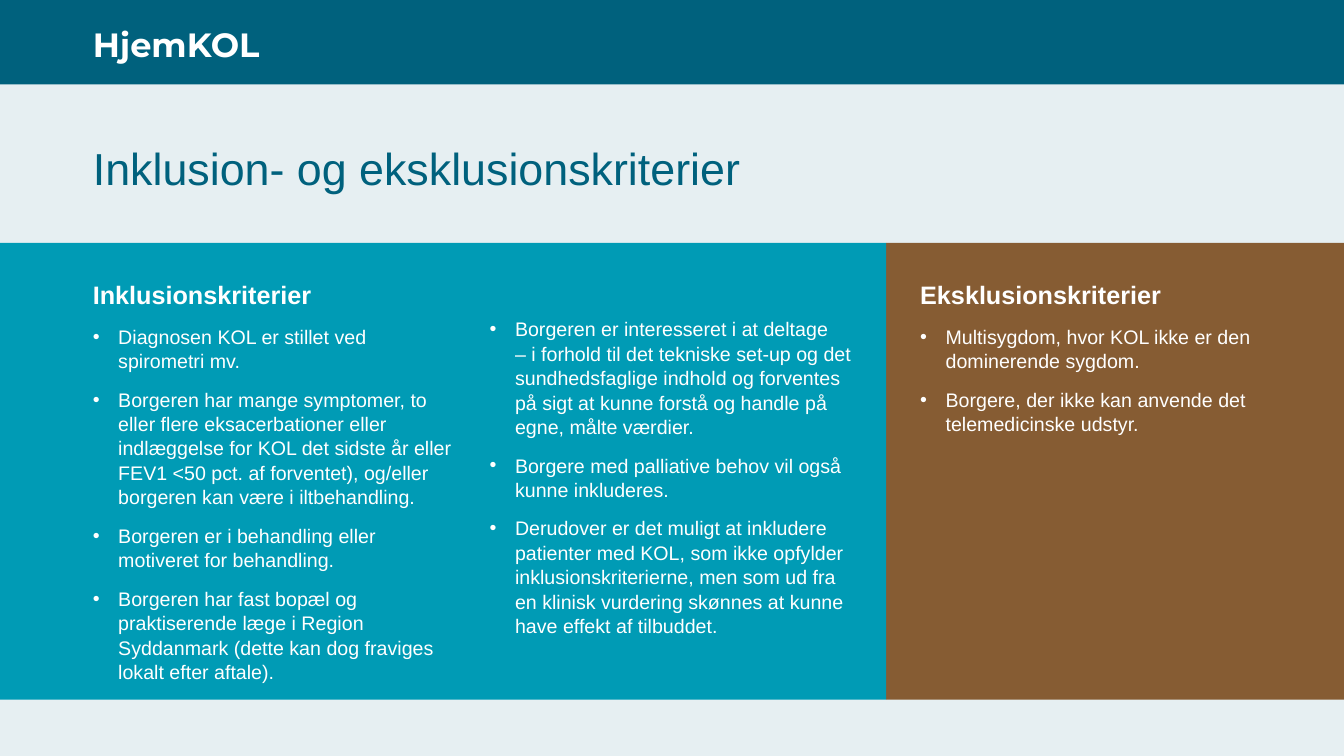
from dataclasses import dataclass

from lxml.etree import SubElement
from pptx import Presentation
from pptx.dml.color import RGBColor
from pptx.enum.shapes import MSO_SHAPE
from pptx.enum.text import MSO_ANCHOR, MSO_AUTO_SIZE, PP_ALIGN
from pptx.oxml.ns import qn
from pptx.util import Cm, Pt


@dataclass(frozen=True)
class Theme:
    background: str = "E6EFF2"
    banner: str = "00617D"
    inclusion: str = "009BB5"
    exclusion: str = "865C33"
    light: str = "FFFFFF"
    font: str = "Arial"
    banner_font: str = "Montserrat"
    title_size: int = 32
    banner_size: int = 24
    heading_size: int = 18
    body_size: int = 14


@dataclass(frozen=True)
class Box:
    left: float
    top: float
    width: float
    height: float

    def inner(self, left, top, width, height):
        return Box(self.left + left, self.top + top, width, height)


THEME = Theme()
SLIDE = Box(0, 0, 33.87, 19.05)
MARGIN = 2.34
PANEL_TOP, PANEL_HEIGHT = 6.12, 11.51
SPLIT = 22.33
COLUMN_TOP, COLUMN_HEIGHT = 0.89, 9.58
INDENT = Cm(0.64)

INCLUSION_FIRST = [
    "Diagnosen KOL er stillet ved spirometri mv.",
    "Borgeren har mange symptomer, to eller flere eksacerbationer eller indlæggelse "
    "for KOL det sidste år eller FEV1 <50 pct. af forventet), og/eller borgeren kan "
    "være i iltbehandling.",
    "Borgeren er i behandling eller motiveret for behandling.",
    "Borgeren har fast bopæl og praktiserende læge i Region Syddanmark "
    "(dette kan dog fraviges lokalt efter aftale).",
]
INCLUSION_SECOND = [
    "Borgeren er interesseret i at deltage\n– i forhold til det tekniske set-up og det "
    "sundhedsfaglige indhold og forventes på sigt at kunne forstå og handle på egne, "
    "målte værdier.",
    "Borgere med palliative behov vil også kunne inkluderes.",
    "Derudover er det muligt at inkludere patienter med KOL, som ikke opfylder "
    "inklusionskriterierne, men som ud fra en klinisk vurdering skønnes at kunne "
    "have effekt af tilbuddet.",
]
EXCLUSION = [
    "Multisygdom, hvor KOL ikke er den dominerende sygdom.",
    "Borgere, der ikke kan anvende det telemedicinske udstyr.",
]


def place(shape, box):
    shape.left, shape.top = Cm(box.left), Cm(box.top)
    shape.width, shape.height = Cm(box.width), Cm(box.height)


def add_panel(slide, box, color):
    shape = slide.shapes.add_shape(
        MSO_SHAPE.RECTANGLE, Cm(box.left), Cm(box.top), Cm(box.width), Cm(box.height))
    shape.shadow.inherit = False
    shape.fill.solid()
    shape.fill.fore_color.rgb = RGBColor.from_string(color)
    shape.line.fill.background()


def add_text_box(slide):
    return slide.shapes.add_textbox(0, 0, 0, 0)


def prepare_frame(shape, box, anchor=MSO_ANCHOR.TOP):
    place(shape, box)
    frame = shape.text_frame
    frame.word_wrap = True
    frame.auto_size = MSO_AUTO_SIZE.NONE
    frame.vertical_anchor = anchor
    frame.margin_left = frame.margin_right = frame.margin_top = frame.margin_bottom = 0
    return frame


def set_bullet(paragraph, bullet):
    properties = paragraph._p.get_or_add_pPr()
    properties.set("marL", str(INDENT if bullet else 0))
    properties.set("indent", str(-INDENT if bullet else 0))
    if bullet:
        SubElement(properties, qn("a:buFont"), typeface=THEME.font)
        SubElement(properties, qn("a:buChar"), char="•")
    else:
        SubElement(properties, qn("a:buNone"))


def write(paragraph, text, size=THEME.body_size, color=THEME.light, font=THEME.font,
          bold=False, bullet=False, after=0, spacing=1.0):
    paragraph.text = text
    paragraph.alignment = PP_ALIGN.LEFT
    paragraph.line_spacing = spacing
    paragraph.space_before, paragraph.space_after = Pt(0), Pt(after)
    set_bullet(paragraph, bullet)
    for run in paragraph.runs:
        run.font.name, run.font.size, run.font.bold = font, Pt(size), bold
        run.font.color.rgb = RGBColor.from_string(color)
    for line_break in paragraph._p.findall(qn("a:br")):
        SubElement(line_break, qn("a:rPr"), sz=str(size * 100))


def fill_column(shape, box, criteria, heading=None):
    frame = prepare_frame(shape, box)
    entries = [(heading, dict(size=THEME.heading_size, bold=True))] if heading else []
    entries += [(text, dict(bullet=True)) for text in criteria]
    for index, (text, style) in enumerate(entries):
        paragraph = frame.add_paragraph() if index else frame.paragraphs[0]
        write(paragraph, text, after=10, spacing=1.04, **style)


def add_banner(slide, box):
    add_panel(slide, box, THEME.banner)
    frame = prepare_frame(add_text_box(slide), box.inner(MARGIN, 0.61, 14.2, 1.02),
                          MSO_ANCHOR.MIDDLE)
    write(frame.paragraphs[0], "HjemKOL", size=THEME.banner_size,
          font=THEME.banner_font, bold=True)


def add_title(slide, box):
    frame = prepare_frame(slide.shapes.title, box)
    write(frame.paragraphs[0], "Inklusion- og eksklusionskriterier",
          size=THEME.title_size, color=THEME.banner, spacing=0.9)


def add_inclusion(slide, box):
    add_panel(slide, box, THEME.inclusion)
    fill_column(slide.placeholders[1], box.inner(MARGIN, COLUMN_TOP, 9.17, COLUMN_HEIGHT),
                INCLUSION_FIRST, "Inklusionskriterier")
    fill_column(add_text_box(slide), box.inner(12.34, 1.85, 9.17, COLUMN_HEIGHT),
                INCLUSION_SECOND)


def add_exclusion(slide, box):
    add_panel(slide, box, THEME.exclusion)
    fill_column(slide.placeholders[2], box.inner(0.86, COLUMN_TOP, 8.33, COLUMN_HEIGHT),
                EXCLUSION, "Eksklusionskriterier")


def bring_placeholders_forward(slide):
    for placeholder in list(slide.placeholders):
        slide.shapes._spTree.append(placeholder._element)


def add_criteria_slide(presentation, box):
    slide = presentation.slides.add_slide(presentation.slide_layouts[3])
    slide.background.fill.solid()
    slide.background.fill.fore_color.rgb = RGBColor.from_string(THEME.background)
    add_banner(slide, box.inner(0, 0, box.width, 2.13))
    add_title(slide, box.inner(MARGIN, 3.71, 21.11, 2.57))
    add_exclusion(slide, box.inner(SPLIT, PANEL_TOP, box.width - SPLIT, PANEL_HEIGHT))
    add_inclusion(slide, box.inner(0, PANEL_TOP, SPLIT, PANEL_HEIGHT))
    bring_placeholders_forward(slide)


def main():
    presentation = Presentation()
    presentation.slide_width, presentation.slide_height = Cm(SLIDE.width), Cm(SLIDE.height)
    add_criteria_slide(presentation, SLIDE)
    presentation.save("out.pptx")


if __name__ == "__main__":
    main()
